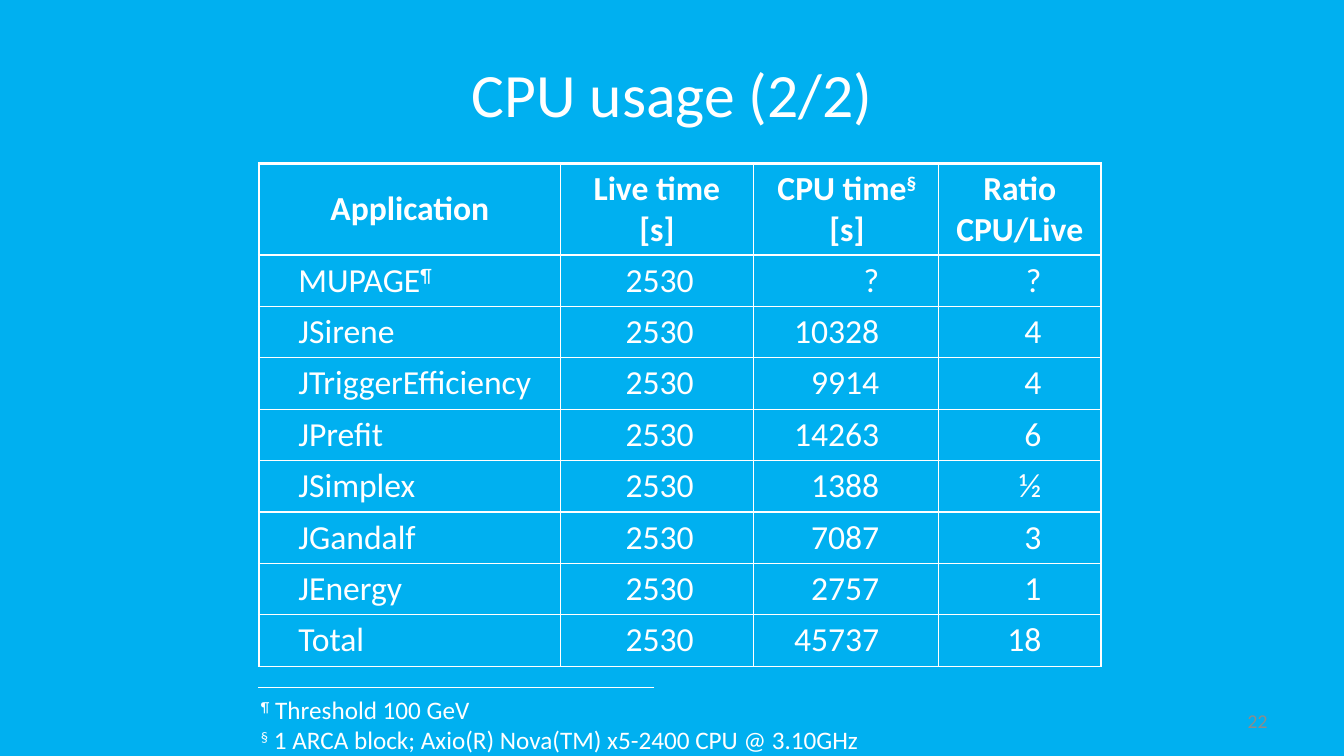
from lxml.etree import SubElement
from pptx import Presentation
from pptx.dml.color import RGBColor
from pptx.enum.shapes import MSO_CONNECTOR
from pptx.enum.text import MSO_ANCHOR, PP_ALIGN
from pptx.oxml.ns import qn
from pptx.util import Inches, Pt

FONT = "Calibri"
WHITE = "FFFFFF"
SKY = "00B0F0"
GREY = "8C8C8C"

HEADERS = ["Application", "Live time\n[s]", "CPU time^§^\n[s]", "Ratio\vCPU/Live"]
LIVE_TIME = "2530"
USAGE = [
    ("MUPAGE^¶^", "?", "?"),
    ("JSirene", "10328", "4"),
    ("JTriggerEfficiency", "9914", "4"),
    ("JPrefit", "14263", "6"),
    ("JSimplex", "1388", "½"),
    ("JGandalf", "7087", "3"),
    ("JEnergy", "2757", "1"),
    ("Total", "45737", "18"),
]
FOOTNOTES = (
    "^¶^ Threshold 100 GeV\v"
    "^§^ 1 ARCA block; Axio(R) Nova(TM) x5-2400 CPU @ 3.10GHz"
)
COLUMN_WIDTHS = [2.99, 1.91, 1.84, 1.61]
HEADER_HEIGHT = 0.91
ROW_HEIGHT = 0.51


def rgb(color):
    return RGBColor.from_string(color)


def write(tf, text, size, align=PP_ALIGN.LEFT, color=WHITE, bold=False):
    for i, line in enumerate(text.split("\n")):
        p = tf.paragraphs[0] if i == 0 else tf.add_paragraph()
        p.alignment = align
        for j, piece in enumerate(line.split("^")):
            for k, part in enumerate(piece.split("\v")):
                if k:
                    p.add_line_break()
                if not part:
                    continue
                r = p.add_run()
                r.text = part
                r.font.name = FONT
                r.font.size = Pt(size)
                r.font.bold = bold
                r.font.color.rgb = rgb(color)
                if j % 2:
                    r._r.get_or_add_rPr().set("baseline", "30000")


def add_text(slide, box, text, size, anchor=MSO_ANCHOR.MIDDLE, **style):
    tf = slide.shapes.add_textbox(*map(Inches, box)).text_frame
    tf.word_wrap = True
    tf.vertical_anchor = anchor
    write(tf, text, size, **style)


def set_borders(cell, widths):
    tcPr = cell._tc.get_or_add_tcPr()
    for side, width in zip("LRTB", widths):
        ln = SubElement(tcPr, qn("a:ln" + side), w=str(Pt(width)))
        fill = SubElement(ln, qn("a:solidFill"))
        SubElement(fill, qn("a:srgbClr"), val=WHITE)


def add_usage_table(slide, left, top):
    rows = [HEADERS] + [(name, LIVE_TIME, cpu, ratio) for name, cpu, ratio in USAGE]
    heights = [HEADER_HEIGHT] + [ROW_HEIGHT] * len(USAGE)
    box = (left, top, sum(COLUMN_WIDTHS), sum(heights))
    table = slide.shapes.add_table(
        len(rows), len(HEADERS), *map(Inches, box)).table
    for column, width in zip(table.columns, COLUMN_WIDTHS):
        column.width = Inches(width)
    for i, (row, height) in enumerate(zip(rows, heights)):
        table.rows[i].height = Inches(height)
        for j, text in enumerate(row):
            cell = table.cell(i, j)
            set_borders(cell, (1 if j else 2.25, 1, 1 if i else 2.25, 1))
            cell.fill.background()
            cell.vertical_anchor = MSO_ANCHOR.MIDDLE
            align = PP_ALIGN.CENTER
            if i and j:
                align = PP_ALIGN.RIGHT
                cell.margin_right = Inches(0.59)
            elif i:
                align = PP_ALIGN.LEFT
                cell.margin_left = Inches(0.39)
            write(cell.text_frame, text, 24, align, bold=i == 0)
    table.cell(0, 2).margin_right = Inches(0.08)


def add_footnotes(slide, left, top):
    line = slide.shapes.add_connector(
        MSO_CONNECTOR.STRAIGHT, Inches(left + 3.93), Inches(top), Inches(left), Inches(top))
    line.line.color.rgb = rgb(WHITE)
    line.line.width = Pt(0.75)
    SubElement(line._element.spPr, qn("a:effectLst"))
    add_text(slide, (left - 0.07, top + 0.02, 6.6, 0.66), FOOTNOTES, 18, MSO_ANCHOR.TOP)


def main():
    prs = Presentation()
    prs.slide_width, prs.slide_height = Inches(13.33), Inches(7.5)
    slide = prs.slides.add_slide(prs.slide_layouts[6])
    slide.background.fill.solid()
    slide.background.fill.fore_color.rgb = rgb(SKY)
    add_text(slide, (0.67, 0.3, 12, 1.25), "CPU usage (2/2)", 44, align=PP_ALIGN.CENTER)
    add_text(slide, (9.56, 6.95, 3.11, 0.4), "22", 14, align=PP_ALIGN.RIGHT, color=GREY)
    add_usage_table(slide, 2.57, 1.62)
    add_footnotes(slide, 2.56, 6.82)
    prs.save("out.pptx")


if __name__ == "__main__":
    main()
